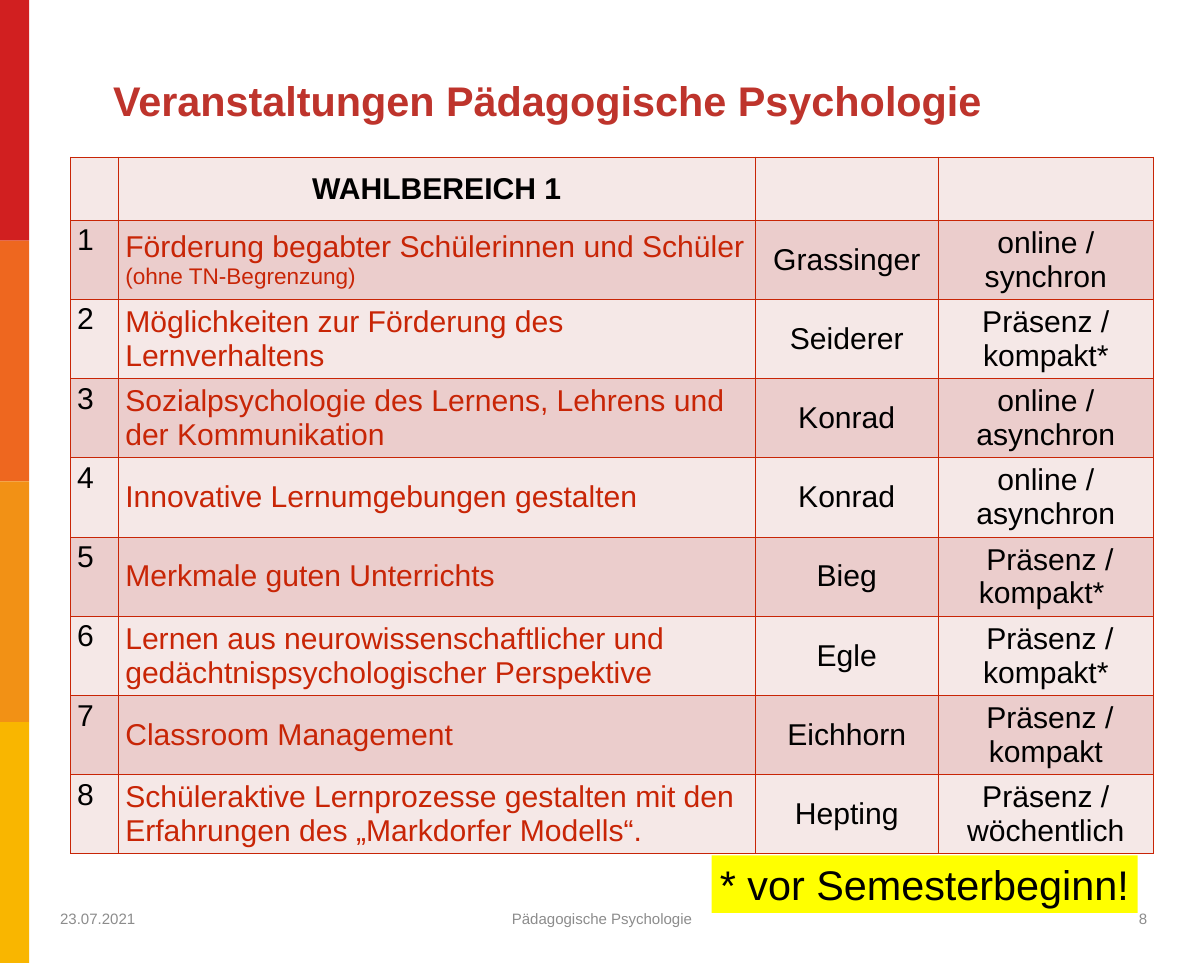
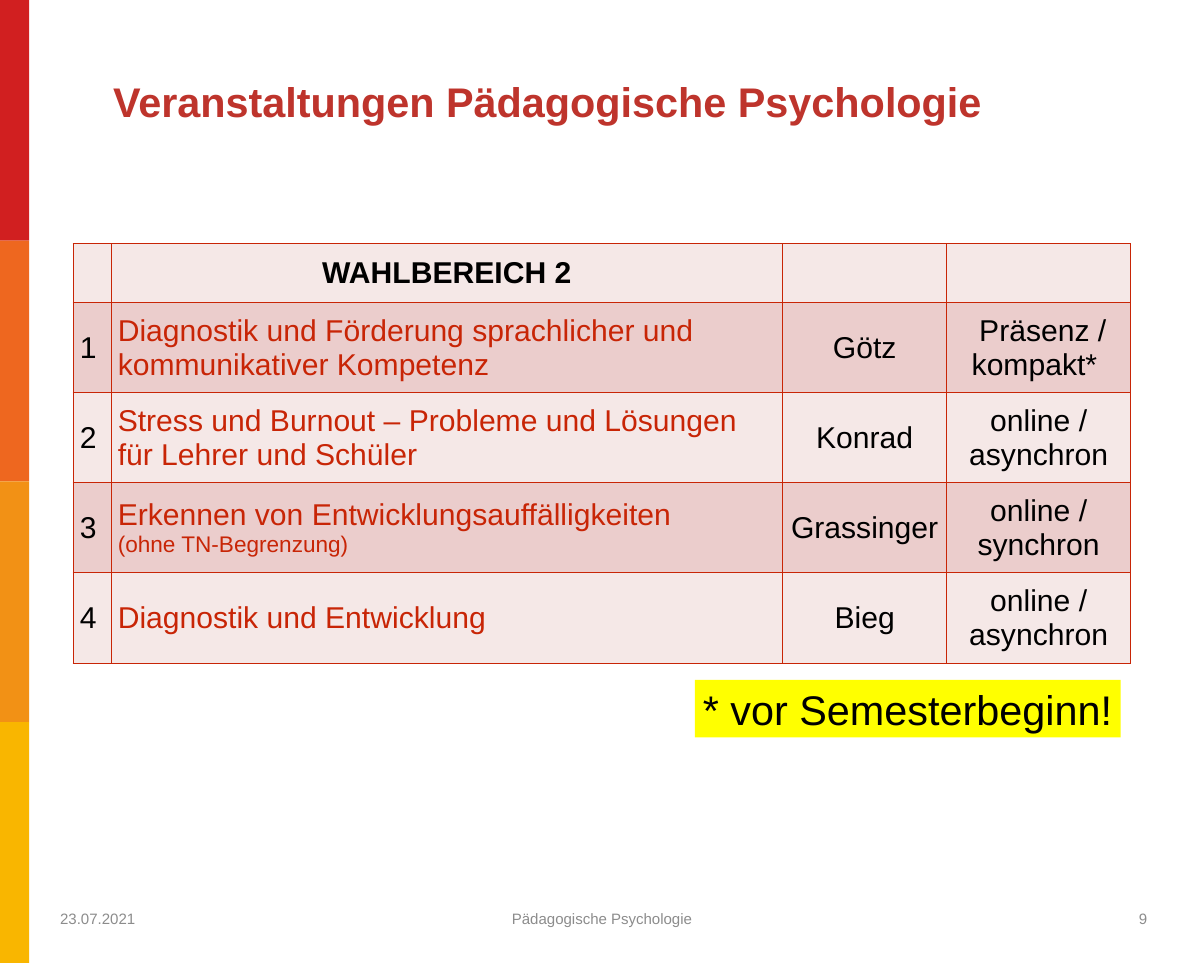
from lxml import etree
from pptx import Presentation
from pptx.dml.color import RGBColor
from pptx.enum import shapes, text
from pptx.oxml import ns
from pptx.util import Inches, Pt

COLOURS = {
    "title": "BE342C", "course": "C82506", "black": "000000", "footer": "8C8C8C",
    "light": "F5E8E7", "dark": "EBCDCC", "note": "FFFF00",
}
BANDS = ["D11F20", "EE671F", "F29115", "F9B600"]
LEFT, CENTER, RIGHT = text.PP_ALIGN.LEFT, text.PP_ALIGN.CENTER, text.PP_ALIGN.RIGHT
TOP, MIDDLE = text.MSO_ANCHOR.TOP, text.MSO_ANCHOR.MIDDLE
SMALL_PRINT = "(ohne TN-Begrenzung)"

SLIDES = [
    {
        "number": 8, "title_top": 0.51, "note": (10.51, 12.63),
        "table": (1.04, 2.32), "columns": [0.71, 9.4, 2.71, 3.17],
        "header_height": 0.93, "row_height": 1.17, "number_anchor": TOP,
        "header": "WAHLBEREICH 1",
        "courses": [
            ("Förderung begabter Schülerinnen und Schüler\n" + SMALL_PRINT,
             "Grassinger", "online / synchron"),
            ("Möglichkeiten zur Förderung des Lernverhaltens",
             "Seiderer", "Präsenz /\nkompakt*"),
            ("Sozialpsychologie des Lernens, Lehrens und der Kommunikation",
             "Konrad", "online / asynchron"),
            ("Innovative Lernumgebungen gestalten", "Konrad", "online / asynchron"),
            ("Merkmale guten Unterrichts", "Bieg", " Präsenz /\nkompakt* "),
            ("Lernen aus neurowissenschaftlicher und gedächtnispsychologischer Perspektive",
             "Egle", " Präsenz /\nkompakt*"),
            ("Classroom Management", "Eichhorn", " Präsenz /\nkompakt"),
            ("Schüleraktive Lernprozesse gestalten mit den Erfahrungen des „Markdorfer Modells“.",
             "Hepting", "Präsenz /\nwöchentlich"),
        ],
    },
    {
        "number": 9, "title_top": 0.53, "note": (10.26, 10.04),
        "table": (1.08, 3.6), "columns": [0.56, 9.92, 2.42, 2.72],
        "header_height": 0.87, "row_height": 1.33, "number_anchor": MIDDLE,
        "header": "WAHLBEREICH 2",
        "courses": [
            ("Diagnostik und Förderung sprachlicher und kommunikativer Kompetenz",
             "Götz", " Präsenz /\nkompakt* "),
            ("Stress und Burnout – Probleme und Lösungen für Lehrer und Schüler",
             "Konrad", "online / asynchron"),
            ("Erkennen von Entwicklungsauffälligkeiten\n" + SMALL_PRINT,
             "Grassinger", "online / synchron"),
            ("Diagnostik und Entwicklung", "Bieg", "online / asynchron"),
        ],
    },
]


def write(frame, words, size, colour, align=LEFT, bold=False, inset=None):
    """Fill a text frame with one paragraph per line, all in one style."""
    frame.text = words
    frame.word_wrap = True
    if inset is not None:
        frame.margin_left = frame.margin_right = Inches(inset)
        frame.margin_top = frame.margin_bottom = Inches(inset)
    for para in frame.paragraphs:
        para.alignment = align
        for span in para.runs:
            span.font.name = "Arial"
            span.font.size = Pt(24 if span.text == SMALL_PRINT else size)
            span.font.bold = bold
            span.font.color.rgb = RGBColor.from_string(COLOURS[colour])


def style_cell(cell, fill):
    """Give a cell its fill and a one-point line on every side."""
    properties = cell._tc.get_or_add_tcPr()
    for side in ("lnL", "lnR", "lnT", "lnB"):
        line = etree.SubElement(properties, ns.qn("a:" + side), w=str(Pt(1)))
        line_fill = etree.SubElement(line, ns.qn("a:solidFill"))
        etree.SubElement(line_fill, ns.qn("a:srgbClr"), val=COLOURS["course"])
    cell.fill.solid()
    cell.fill.fore_color.rgb = RGBColor.from_string(COLOURS[fill])


deck = Presentation()
deck.slide_width, deck.slide_height = Inches(17.78), Inches(14.22)

for content in SLIDES:
    page = deck.slides.add_slide(deck.slide_layouts[6])

    # Colour bands, title and footer
    band_height = deck.slide_height // len(BANDS)
    for index, colour in enumerate(BANDS):
        band = page.shapes.add_shape(shapes.MSO_SHAPE.RECTANGLE, 0, index * band_height,
                                     Inches(0.43), band_height)
        band.shadow.inherit = False
        band.fill.solid()
        band.fill.fore_color.rgb = RGBColor.from_string(colour)
        band.line.fill.background()

    title = page.shapes.add_textbox(Inches(1.61), Inches(content["title_top"]),
                                    Inches(15.43), Inches(1.93))
    title.text_frame.vertical_anchor = MIDDLE
    write(title.text_frame, "Veranstaltungen Pädagogische Psychologie", 44, "title",
          bold=True, inset=0.06)

    for left, width, words, align in [
        (0.79, 4, "23.07.2021", LEFT),
        (5.89, 6, "Pädagogische Psychologie", CENTER),
        (12.56, 4.48, str(content["number"]), RIGHT),
    ]:
        footer = page.shapes.add_textbox(Inches(left), Inches(13.18), Inches(width), Inches(0.76))
        footer.text_frame.vertical_anchor = MIDDLE
        write(footer.text_frame, words, 16, "footer", align)

    # Course table
    rows = [("", content["header"], "", "")]
    rows += [(str(number), *course) for number, course in enumerate(content["courses"], 1)]
    heights = [content["header_height"]] + [content["row_height"]] * len(content["courses"])
    left, top = content["table"]
    table = page.shapes.add_table(len(rows), len(content["columns"]), Inches(left), Inches(top),
                                  Inches(sum(content["columns"])), Inches(sum(heights))).table
    table.first_row = table.horz_banding = False
    for column, width in zip(table.columns, content["columns"]):
        column.width = Inches(width)

    for row_index, (row, height) in enumerate(zip(rows, heights)):
        table.rows[row_index].height = Inches(height)
        is_header = row_index == 0
        for column_index, words in enumerate(row):
            cell = table.cell(row_index, column_index)
            style_cell(cell, "dark" if row_index % 2 else "light")
            cell.vertical_anchor = content["number_anchor"] if column_index == 0 else MIDDLE
            if words:
                is_course = column_index == 1 and not is_header
                write(cell.text_frame, words, 32, "course" if is_course else "black",
                      CENTER if is_header or column_index > 1 else LEFT, bold=is_header)

    # Highlighted note
    left, top = content["note"]
    note = page.shapes.add_shape(shapes.MSO_SHAPE.RECTANGLE, Inches(left), Inches(top),
                                 Inches(6.29), Inches(0.85))
    note.shadow.inherit = False
    note.fill.solid()
    note.fill.fore_color.rgb = RGBColor.from_string(COLOURS["note"])
    note.line.fill.background()
    note.text_frame.vertical_anchor = MIDDLE
    write(note.text_frame, "* vor Semesterbeginn!", 44, "black", CENTER, inset=0.06)
    note.text_frame.word_wrap = False

deck.save("out.pptx")
